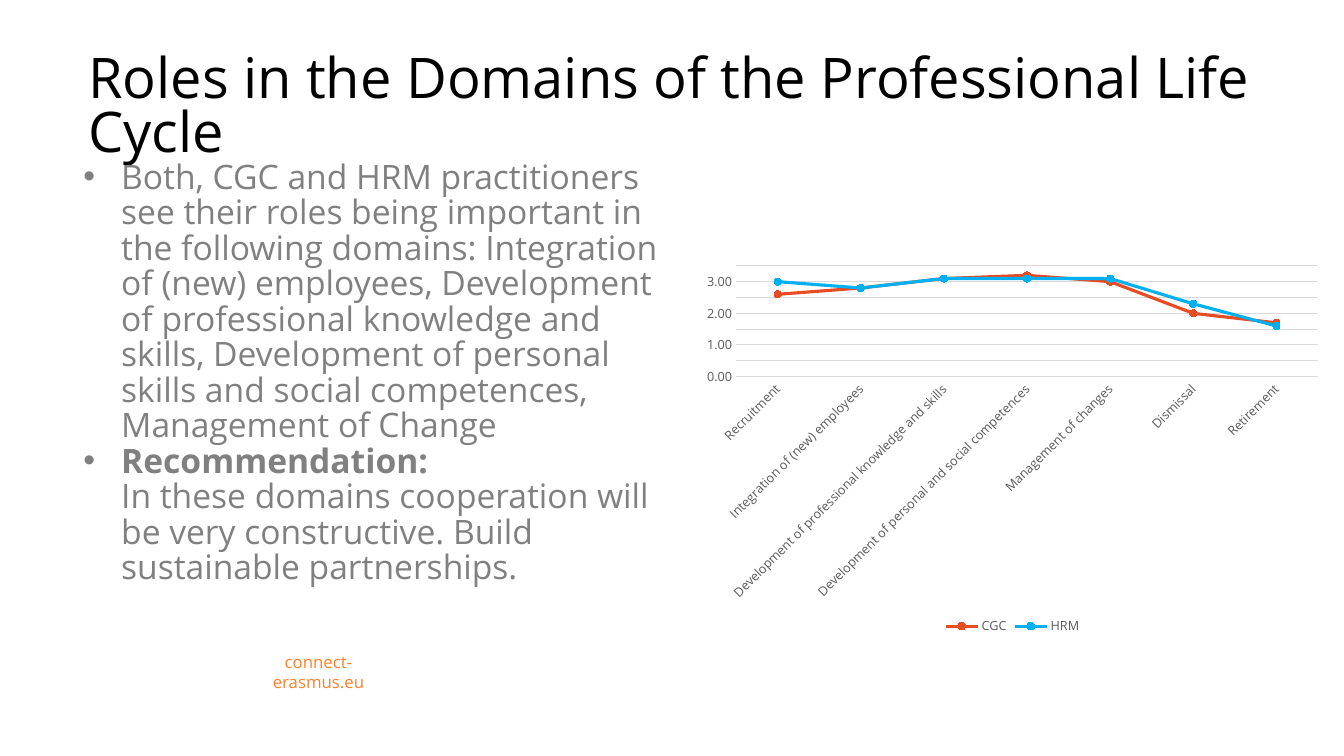
from lxml import etree
from pptx import Presentation
from pptx import util as u
from pptx.chart import data as chart_data
from pptx.dml import color
from pptx.enum import chart as ch
from pptx.enum import text
from pptx.oxml import ns

TITLE = "Roles in the Domains of the Professional Life Cycle"
POINTS = [
    [("Both, CGC and HRM practitioners see their roles being important in the "
      "following domains: Integration of (new) employees, Development of "
      "professional knowledge and skills, Development of personal skills and "
      "social competences, Management of Change", False)],
    [("Recommendation:", True),
     ("In these domains cooperation will be very constructive. "
      "Build sustainable partnerships.", False)],
]
SITE = "connect-erasmus.eu"
DOMAINS = [
    "Recruitment",
    "Integration of (new) employees",
    "Development of professional knowledge and skills",
    "Development of personal and social competences",
    "Management of changes",
    "Dismissal",
    "Retirement",
]
ROLES = {
    "CGC": [2.6, 2.8, 3.1, 3.2, 3.0, 2.0, 1.7],
    "HRM": [3.0, 2.8, 3.1, 3.1, 3.1, 2.3, 1.6],
}
THEME = {
    "font": "Open Sans",
    "title": (40, "000000"),
    "body": (24, "808080"),
    "site": (12, "FF7F2A"),
    "axis": (9, "595959"),
    "grid": "D9D9D9",
    "CGC": "E84C22",
    "HRM": "00B0F0",
}
INDENT = 27


def rgb(value):
    return color.RGBColor.from_string(value)


def style(font, role, bold=False):
    size, shade = THEME[role]
    font.name = THEME["font"]
    font.size = u.Pt(size)
    font.bold = bold
    font.color.rgb = rgb(shade)


def add_frame(slide, box, anchor, side=7.2):
    frame = slide.shapes.add_textbox(*map(u.Pt, box)).text_frame
    frame.word_wrap = True
    frame.vertical_anchor = anchor
    frame.margin_left = frame.margin_right = u.Pt(side)
    return frame


def add_run(paragraph, words, role, bold=False):
    run = paragraph.add_run()
    run.text = words
    style(run.font, role, bold)


def add_bullet(paragraph):
    props = paragraph._p.get_or_add_pPr()
    props.set("marL", str(u.Pt(INDENT)))
    props.set("indent", str(u.Pt(-INDENT)))
    etree.SubElement(props, ns.qn("a:buFont")).set("typeface", "Arial")
    etree.SubElement(props, ns.qn("a:buChar")).set("char", "•")


def add_role_chart(slide, box):
    data = chart_data.CategoryChartData(number_format="0.0")
    data.categories = DOMAINS
    for role, ratings in ROLES.items():
        data.add_series(role, ratings)
    chart = slide.shapes.add_chart(
        ch.XL_CHART_TYPE.LINE_MARKERS, *map(u.Pt, box), data).chart
    style(chart.font, "axis")
    chart.has_title = False
    chart.has_legend = True
    chart.legend.position = ch.XL_LEGEND_POSITION.BOTTOM
    chart.legend.include_in_layout = False
    style(chart.legend.font, "axis")

    domains, ratings = chart.category_axis, chart.value_axis
    for axis in (domains, ratings):
        axis.major_tick_mark = axis.minor_tick_mark = ch.XL_TICK_MARK.NONE
        style(axis.tick_labels.font, "axis")
    domains.format.line.color.rgb = rgb(THEME["grid"])
    domains.format.line.width = u.Pt(0.75)
    domains._element.find(ns.qn("c:txPr")).find(ns.qn("a:bodyPr")).set("rot", "-2700000")
    ratings.format.line.fill.background()
    ratings.minimum_scale, ratings.maximum_scale = 0, 3.5
    ratings.major_unit = 0.5
    ratings.tick_labels.number_format = "###0.00"
    ratings.tick_labels.number_format_is_linked = False
    ratings.major_gridlines.format.line.color.rgb = rgb(THEME["grid"])
    ratings.major_gridlines.format.line.width = u.Pt(0.75)

    chart.plots[0].vary_by_categories = False
    for series in chart.plots[0].series:
        shade = rgb(THEME[series.name])
        series.smooth = False
        series.format.line.color.rgb = shade
        series.format.line.width = u.Pt(2.25)
        series.marker.style = ch.XL_MARKER_STYLE.CIRCLE
        series.marker.size = 5
        series.marker.format.fill.solid()
        series.marker.format.fill.fore_color.rgb = shade
        series.marker.format.line.color.rgb = shade


def main():
    deck = Presentation()
    deck.slide_width, deck.slide_height = u.Pt(960), u.Pt(540)
    slide = deck.slides.add_slide(deck.slide_layouts[6])

    title = add_frame(slide, (56, 5, 894, 115), text.MSO_ANCHOR.BOTTOM).paragraphs[0]
    title.line_spacing = 0.8
    add_run(title, TITLE, "title")

    body = add_frame(slide, (52.5, 111.5, 427, 357), text.MSO_ANCHOR.TOP)
    for number, point in enumerate(POINTS):
        paragraph = body.add_paragraph() if number else body.paragraphs[0]
        paragraph.line_spacing = 0.88
        add_bullet(paragraph)
        for part, (words, bold) in enumerate(point):
            if part:
                paragraph.add_line_break()
            add_run(paragraph, words, "body", bold)

    site = add_frame(slide, (164, 469, 127, 21.5), text.MSO_ANCHOR.MIDDLE, 14).paragraphs[0]
    site.alignment = text.PP_ALIGN.CENTER
    add_run(site, SITE, "site")

    add_role_chart(slide, (496, 184.5, 454.5, 272))
    deck.save("out.pptx")


if __name__ == "__main__":
    main()
